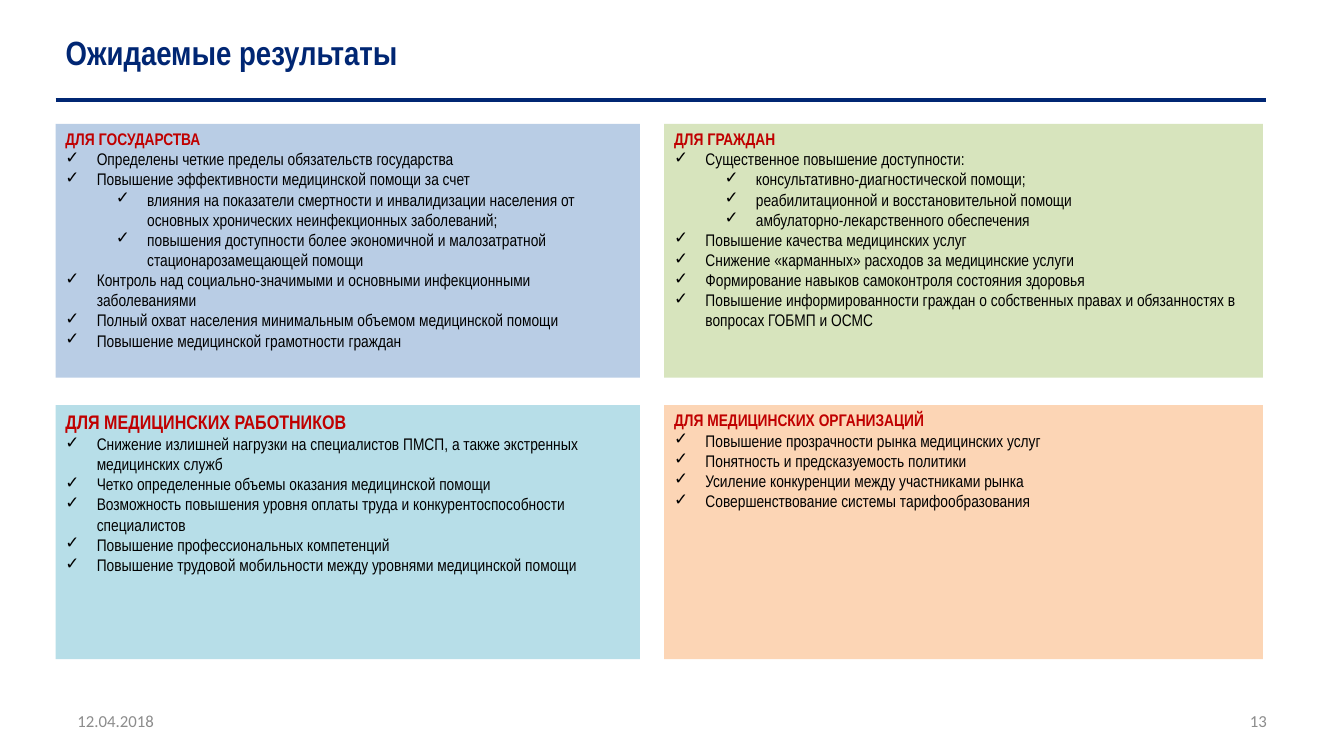
from lxml.etree import SubElement
from pptx import Presentation
from pptx.dml.color import RGBColor
from pptx.enum.shapes import MSO_CONNECTOR, MSO_SHAPE
from pptx.enum.text import MSO_ANCHOR, MSO_AUTO_SIZE, PP_ALIGN
from pptx.oxml.ns import qn
from pptx.util import Cm, Pt

NAVY = RGBColor(0x00, 0x26, 0x73)
RED = RGBColor(0xC0, 0x00, 0x00)
BLACK = RGBColor(0x00, 0x00, 0x00)
GREY = RGBColor(0x8C, 0x8C, 0x8C)
BLUE = RGBColor(0xB9, 0xCD, 0xE5)
GREEN = RGBColor(0xD7, 0xE4, 0xBD)
TEAL = RGBColor(0xB7, 0xDE, 0xE8)
PEACH = RGBColor(0xFC, 0xD5, 0xB5)

NARROW = "Arial Narrow"
LEFT, RIGHT = 1.4, 31.9
COLUMNS = [(LEFT, 14.73), (16.74, 15.09)]  # left edge and width
PANEL_TOP, PANEL_HEIGHT, ROW_STEP = 3.12, 6.4, 7.09
HANGING, LEVEL_INDENT = 0.79, 1.27

# Panels row by row: heading, heading size, fill, (level, text) items
PANELS = [
    ("ДЛЯ ГОСУДАРСТВА", 12, BLUE, [
        (0, "Определены четкие пределы обязательств государства"),
        (0, "Повышение эффективности медицинской помощи за счет"),
        (1, "влияния на показатели смертности и инвалидизации населения от "
            "основных хронических неинфекционных заболеваний;"),
        (1, "повышения доступности более экономичной и малозатратной "
            "стационарозамещающей помощи"),
        (0, "Контроль над социально-значимыми и основными инфекционными "
            "заболеваниями"),
        (0, "Полный охват населения минимальным объемом медицинской помощи"),
        (0, "Повышение медицинской грамотности граждан"),
    ]),
    ("ДЛЯ ГРАЖДАН", 12, GREEN, [
        (0, "Существенное повышение доступности:"),
        (1, "консультативно-диагностической помощи;"),
        (1, "реабилитационной и восстановительной помощи"),
        (1, "амбулаторно-лекарственного обеспечения"),
        (0, "Повышение качества медицинских услуг"),
        (0, "Снижение «карманных» расходов за медицинские услуги"),
        (0, "Формирование навыков самоконтроля состояния здоровья"),
        (0, "Повышение информированности граждан о собственных правах и "
            "обязанностях в вопросах ГОБМП и ОСМС"),
    ]),
    ("ДЛЯ МЕДИЦИНСКИХ РАБОТНИКОВ", 14, TEAL, [
        (0, "Снижение излишней нагрузки на специалистов ПМСП, а также "
            "экстренных медицинских служб"),
        (0, "Четко определенные объемы оказания медицинской помощи"),
        (0, "Возможность повышения уровня оплаты труда и "
            "конкурентоспособности специалистов"),
        (0, "Повышение профессиональных компетенций"),
        (0, "Повышение трудовой мобильности между уровнями медицинской помощи"),
    ]),
    ("ДЛЯ МЕДИЦИНСКИХ ОРГАНИЗАЦИЙ", 12, PEACH, [
        (0, "Повышение прозрачности рынка медицинских услуг"),
        (0, "Понятность и предсказуемость политики"),
        (0, "Усиление конкуренции между участниками рынка"),
        (0, "Совершенствование системы тарифообразования"),
    ]),
]


def add_span(para, text, size, color, font=NARROW, bold=False):
    span = para.add_run()
    span.text = text
    span.font.name = font
    span.font.size = Pt(size)
    span.font.bold = bold
    span.font.color.rgb = color


def add_check_mark(para, level):
    para.level = level
    properties = para._p.get_or_add_pPr()
    properties.set("marL", str(Cm(HANGING + level * LEVEL_INDENT)))
    properties.set("indent", str(-Cm(HANGING)))
    SubElement(properties, qn("a:buFont")).set("typeface", NARROW)
    SubElement(properties, qn("a:buChar")).set("char", "✓")


def add_header(page, left, top, width, height):
    # Title
    title = page.shapes.title
    title.left, title.top = Cm(left), Cm(top)
    title.width, title.height = Cm(width), Cm(height)
    frame = title.text_frame
    frame.word_wrap = True
    frame.auto_size = MSO_AUTO_SIZE.NONE
    frame.vertical_anchor = MSO_ANCHOR.MIDDLE
    para = frame.paragraphs[0]
    para.alignment = PP_ALIGN.LEFT
    add_span(para, "Ожидаемые результаты", 24, NAVY, bold=True)

    # Rule below the title
    rule_y = Cm(top + height + 0.41)
    rule = page.shapes.add_connector(
        MSO_CONNECTOR.STRAIGHT, Cm(left), rule_y, Cm(RIGHT), rule_y)
    rule.line.color.rgb = NAVY
    rule.line.width = Pt(3)
    SubElement(rule._element.spPr, qn("a:effectLst"))


def add_panel(page, left, top, width, height, panel):
    heading, heading_size, fill, items = panel
    box = page.shapes.add_shape(
        MSO_SHAPE.RECTANGLE, Cm(left), Cm(top), Cm(width), Cm(height))
    box.shadow.inherit = False
    box.fill.solid()
    box.fill.fore_color.rgb = fill
    box.line.fill.background()
    frame = box.text_frame
    frame.word_wrap = True
    frame.vertical_anchor = MSO_ANCHOR.TOP

    # Heading and checked items
    para = frame.paragraphs[0]
    para.alignment = PP_ALIGN.LEFT
    add_span(para, heading, heading_size, RED, bold=True)
    for level, text in items:
        para = frame.add_paragraph()
        para.alignment = PP_ALIGN.LEFT
        add_check_mark(para, level)
        add_span(para, text, 12, BLACK)


def add_footer(page, left, top, width, height):
    # Date at the left end, page number at the right end
    box_width = 7.9
    for text, offset, alignment in [
            ("12.04.2018", 0, PP_ALIGN.LEFT),
            ("13", width - box_width, PP_ALIGN.RIGHT)]:
        box = page.shapes.add_textbox(
            Cm(left + offset), Cm(top), Cm(box_width), Cm(height))
        frame = box.text_frame
        frame.word_wrap = True
        frame.vertical_anchor = MSO_ANCHOR.MIDDLE
        para = frame.paragraphs[0]
        para.alignment = alignment
        add_span(para, text, 12, GREY, font="Calibri")


def main():
    deck = Presentation()
    deck.slide_width, deck.slide_height = Cm(33.87), Cm(19.05)
    page = deck.slides.add_slide(deck.slide_layouts[5])
    add_header(page, LEFT, 0.53, 31.9, 1.57)
    for index, panel in enumerate(PANELS):
        row, column = divmod(index, 2)
        left, width = COLUMNS[column]
        add_panel(page, left, PANEL_TOP + row * ROW_STEP, width, PANEL_HEIGHT, panel)
    add_footer(page, 1.7, 17.65, 30.48, 1.02)
    deck.save("out.pptx")


if __name__ == "__main__":
    main()
